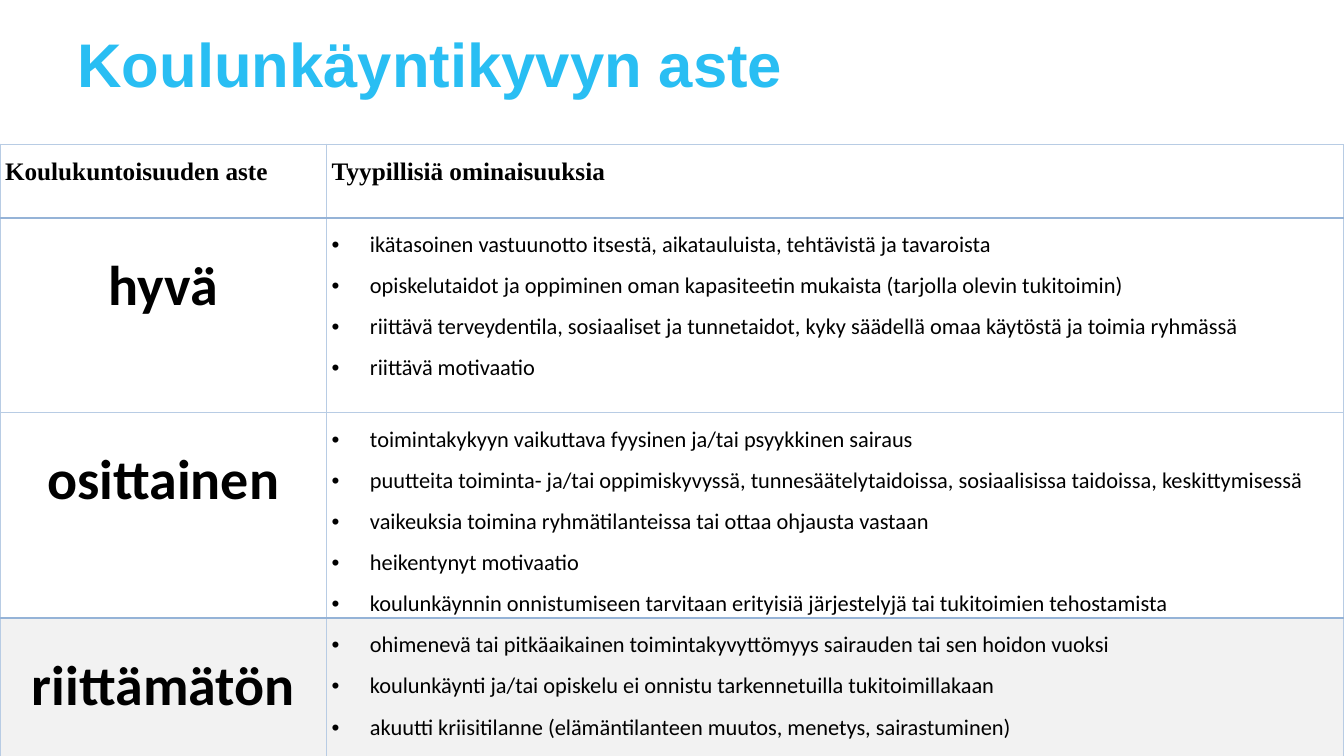
from lxml import etree
from pptx import Presentation
from pptx.dml.color import RGBColor
from pptx.enum.text import MSO_ANCHOR, PP_ALIGN
from pptx.oxml.ns import qn
from pptx.util import Inches, Pt

CENTER, JUSTIFY = PP_ALIGN.CENTER, PP_ALIGN.JUSTIFY
MIDDLE = MSO_ANCHOR.MIDDLE

# Content
TITLE = "Koulunkäyntikyvyn aste"
HEADERS = ["Koulukuntoisuuden aste", "Tyypillisiä ominaisuuksia"]
LEVELS = [
    ("hyvä", "FFFFFF", [
        "ikätasoinen vastuunotto itsestä, aikatauluista, tehtävistä ja tavaroista",
        "opiskelutaidot ja oppiminen oman kapasiteetin mukaista (tarjolla olevin tukitoimin)",
        "riittävä terveydentila, sosiaaliset ja tunnetaidot, kyky säädellä omaa käytöstä ja toimia ryhmässä",
        "riittävä motivaatio",
    ]),
    ("osittainen", "FFFFFF", [
        "toimintakykyyn vaikuttava fyysinen ja/tai psyykkinen sairaus",
        "puutteita toiminta- ja/tai oppimiskyvyssä, tunnesäätelytaidoissa, sosiaalisissa taidoissa, keskittymisessä",
        "vaikeuksia toimina ryhmätilanteissa tai ottaa ohjausta vastaan",
        "heikentynyt motivaatio",
        "koulunkäynnin onnistumiseen tarvitaan erityisiä järjestelyjä tai tukitoimien tehostamista",
    ]),
    ("riittämätön", "F2F2F2", [
        "ohimenevä tai pitkäaikainen toimintakyvyttömyys sairauden tai sen hoidon vuoksi",
        "koulunkäynti ja/tai opiskelu ei onnistu tarkennetuilla tukitoimillakaan",
        "akuutti kriisitilanne (elämäntilanteen muutos, menetys, sairastuminen)",
    ]),
]
COLUMN_WIDTHS = [3.24, 10.09]
ROW_HEIGHTS = [0.73, 1.93, 2.04, 1.45]
THIN_LINE = ("B8CCE4", 1)
HEAVY_LINE = ("95B3D7", 1.5)
# Line above each row, then the one below the last row
ROW_LINES = [THIN_LINE, HEAVY_LINE, THIN_LINE, HEAVY_LINE, THIN_LINE]


def color(hex_string):
    return RGBColor.from_string(hex_string)


def set_font(para, name, size, bold, hex_string="000000"):
    para.font.name = name
    para.font.size = Pt(size)
    para.font.bold = bold
    para.font.color.rgb = color(hex_string)


def add_bullet(para):
    properties = para._p.get_or_add_pPr()
    properties.set("marL", str(Inches(0.38)))
    properties.set("indent", str(-Inches(0.38)))
    etree.SubElement(properties, qn("a:buFont"), typeface="Arial")
    etree.SubElement(properties, qn("a:buChar"), char="•")


def set_borders(cell, top, bottom):
    properties = cell._tc.get_or_add_tcPr()
    sides = [("L", THIN_LINE), ("R", THIN_LINE), ("T", top), ("B", bottom)]
    for position, (side, (hex_string, width)) in enumerate(sides):
        line = etree.Element(qn("a:ln" + side), w=str(Pt(width)))
        fill = etree.SubElement(line, qn("a:solidFill"))
        etree.SubElement(fill, qn("a:srgbClr"), val=hex_string)
        properties.insert(position, line)


def fill_cell(cell, lines, font, size, bold, align, fill, bulleted=False):
    cell.margin_left = cell.margin_right = Inches(0.05)
    cell.margin_top = cell.margin_bottom = 0
    cell.fill.solid()
    cell.fill.fore_color.rgb = color(fill)
    frame = cell.text_frame
    for index, line in enumerate(lines):
        para = frame.add_paragraph() if index else frame.paragraphs[0]
        para.text = line
        para.alignment = align
        para.line_spacing = 1.5
        if bulleted:
            add_bullet(para)
        set_font(para, font, size, bold)


deck = Presentation()
deck.slide_width, deck.slide_height = Inches(13.33), Inches(7.5)
page = deck.slides.add_slide(deck.slide_layouts[6])

# Title
box = page.shapes.add_textbox(Inches(0.67), 0, Inches(12), Inches(1.25))
box.text_frame.word_wrap = True
box.text_frame.vertical_anchor = MIDDLE
title = box.text_frame.paragraphs[0]
title.text = TITLE
set_font(title, "Arial", 44, True, "29BEF3")

# Table grid
table = page.shapes.add_table(
    len(ROW_HEIGHTS), len(COLUMN_WIDTHS), 0, Inches(1.43),
    Inches(sum(COLUMN_WIDTHS)), Inches(sum(ROW_HEIGHTS))).table
table.first_row = table.horz_banding = False
for column, width in zip(table.columns, COLUMN_WIDTHS):
    column.width = Inches(width)
for row, height in zip(table.rows, ROW_HEIGHTS):
    row.height = Inches(height)

# Header row and one row for each level
for column, header in enumerate(HEADERS):
    fill_cell(table.cell(0, column), [header], "Times New Roman", 18, True,
              JUSTIFY, "FFFFFF")
for row, (level, fill, traits) in enumerate(LEVELS, 1):
    fill_cell(table.cell(row, 0), [level], "Calibri", 40, True, CENTER, fill)
    fill_cell(table.cell(row, 1), traits, "Calibri", 16, False, JUSTIFY, fill,
              bulleted=True)

# Borders
for row in range(len(ROW_HEIGHTS)):
    for column in range(len(COLUMN_WIDTHS)):
        set_borders(table.cell(row, column), ROW_LINES[row], ROW_LINES[row + 1])

deck.save("out.pptx")
